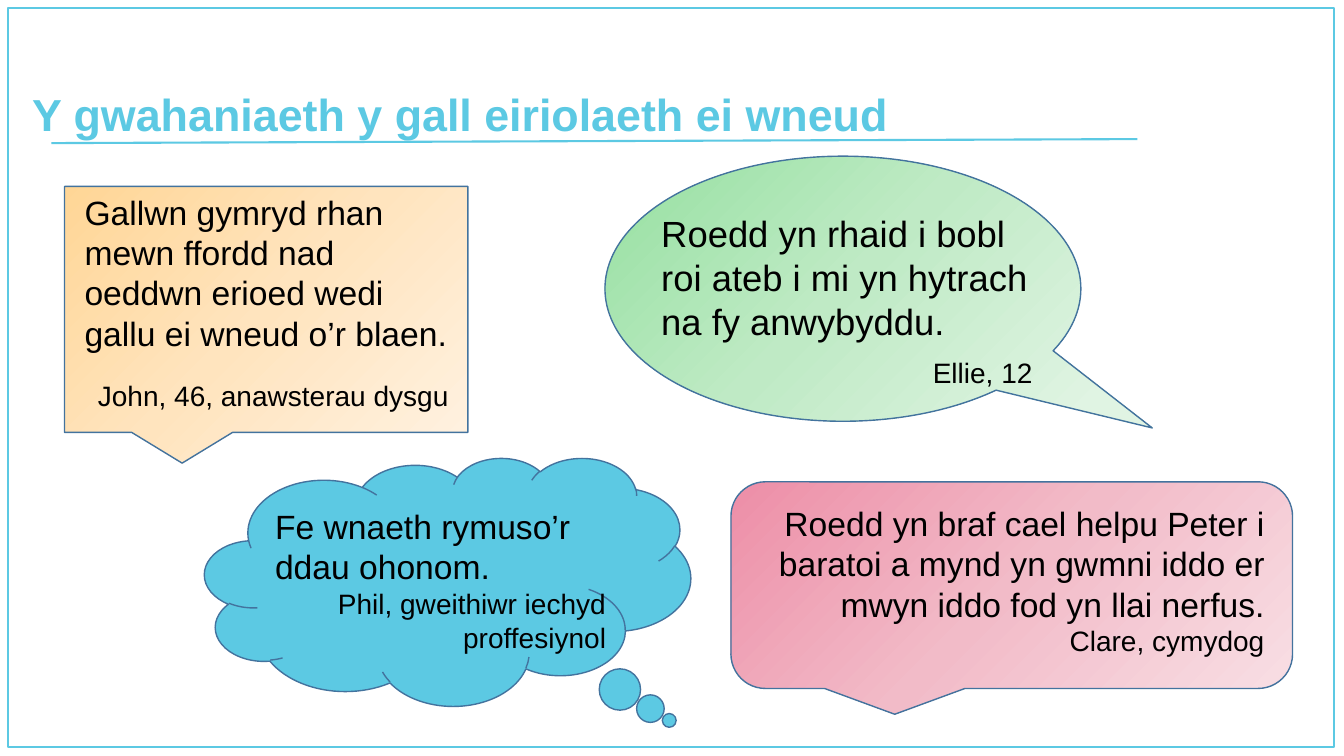
from copy import deepcopy

from lxml.etree import SubElement
from pptx import Presentation
from pptx.dml.color import RGBColor
from pptx.enum.shapes import MSO_CONNECTOR, MSO_SHAPE
from pptx.enum.text import MSO_ANCHOR, PP_ALIGN
from pptx.oxml.ns import qn
from pptx.util import Inches, Pt

COLORS = {
    "accent": "5CC9E3",
    "outline": "43739E",
    "text": "000000",
    "orange": ["FFD696", "FFE4BE", "FFF1DF"],
    "green": ["95E0A0", "BFEAC5", "E0F4E3"],
    "pink": ["ED8EA7", "F2BBC8", "F8DEE4"],
}
LEFT, RIGHT = PP_ALIGN.LEFT, PP_ALIGN.RIGHT


class SlideBuilder:
    font = "Arial"

    def __init__(self, prs):
        self.slide = prs.slides.add_slide(prs.slide_layouts[6])

    def color(self, name):
        return RGBColor.from_string(COLORS[name])

    def rule(self, start, end):
        x1, y1, x2, y2 = (Inches(v) for v in start + end)
        line = self.slide.shapes.add_connector(MSO_CONNECTOR.STRAIGHT, x1, y1, x2, y2)
        line.line.color.rgb = self.color("accent")
        line.line.width = Pt(1.5)
        SubElement(line._element.spPr, qn("a:effectLst"))

    def shape(self, kind, box, line):
        sp = self.slide.shapes.add_shape(kind, *(Inches(v) for v in box))
        sp.shadow.inherit = False
        sp.line.color.rgb = self.color(line)
        sp.line.width = Pt(1)
        return sp

    def frame(self, box):
        self.shape(MSO_SHAPE.RECTANGLE, box, "accent").fill.background()

    def callout(self, kind, box, fill, tail=None):
        sp = self.shape(kind, box, "outline")
        if tail:
            sp.adjustments[0], sp.adjustments[1] = tail
        if fill == "accent":
            sp.fill.solid()
            sp.fill.fore_color.rgb = self.color(fill)
        else:
            self.gradient(sp.fill, COLORS[fill])

    def gradient(self, fill, shades):
        fill.gradient()
        fill.gradient_angle = 315
        first = fill._xPr.find(".//" + qn("a:gs"))
        first.addnext(deepcopy(first))
        for stop, position, shade in zip(fill.gradient_stops, (0, 0.5, 1), shades):
            stop.position = position
            stop.color.rgb = RGBColor.from_string(shade)

    def text_box(self, box):
        tf = self.slide.shapes.add_textbox(*(Inches(v) for v in box)).text_frame
        tf.word_wrap = True
        return tf

    def run(self, p, text, size, color="text", bold=False):
        r = p.add_run()
        r.text = text
        r.font.name = self.font
        r.font.size = Pt(size)
        r.font.bold = bold
        r.font.color.rgb = self.color(color)

    def title(self, text, box):
        tf = self.text_box(box)
        tf.vertical_anchor = MSO_ANCHOR.BOTTOM
        p = tf.paragraphs[0]
        p.line_spacing = 0.9
        self.run(p, text, 32, "accent", True)

    def quote(self, box, text, speaker, size=24, align=LEFT, gap=0):
        tf = self.text_box(box)
        p = tf.paragraphs[0]
        p.alignment = align
        self.run(p, text, size)
        p = tf.add_paragraph()
        p.alignment = RIGHT
        p.space_before = Pt(gap)
        self.run(p, speaker, 20)


def main():
    prs = Presentation()
    prs.slide_width, prs.slide_height = Inches(13.33), Inches(7.5)
    s = SlideBuilder(prs)

    s.rule((0.51, 1.42), (11.28, 1.38))
    s.frame((0.08, 0.08, 13.15, 7.33))
    s.title("Y gwahaniaeth y gall eiriolaeth ei wneud", (0.22, 0, 11.5, 1.45))

    s.callout(MSO_SHAPE.RECTANGULAR_CALLOUT, (0.64, 1.85, 4, 2.44), "orange")
    s.callout(MSO_SHAPE.OVAL_CALLOUT, (6, 1.55, 4.72, 2.63), "green", (0.65, 0.525))
    s.callout(MSO_SHAPE.CLOUD_CALLOUT, (2.03, 4.54, 4.82, 2.46), "accent", (0.456, 0.56))
    s.callout(MSO_SHAPE.ROUNDED_RECTANGULAR_CALLOUT, (7.25, 4.78, 5.57, 2.05), "pink")

    s.quote((0.74, 1.85, 3.81, 2.32),
            "Gallwn gymryd rhan mewn ffordd nad oeddwn erioed wedi gallu ei wneud o’r blaen.",
            "John, 46, anawsterau dysgu", gap=18.4)
    s.quote((6.46, 2.05, 3.88, 1.88),
            "Roedd yn rhaid i bobl roi ateb i mi yn hytrach na fy anwybyddu.",
            "Ellie, 12", size=26, gap=9.2)
    s.quote((2.63, 4.97, 3.48, 1.58),
            "Fe wnaeth rymuso’r ddau ohonom.",
            "Phil, gweithiwr iechyd proffesiynol")
    s.quote((7.42, 4.94, 5.22, 1.65),
            "Roedd yn braf cael helpu Peter i baratoi a mynd yn gwmni iddo er mwyn iddo fod yn llai nerfus.",
            "Clare, cymydog", align=RIGHT)

    prs.save("out.pptx")


if __name__ == "__main__":
    main()
